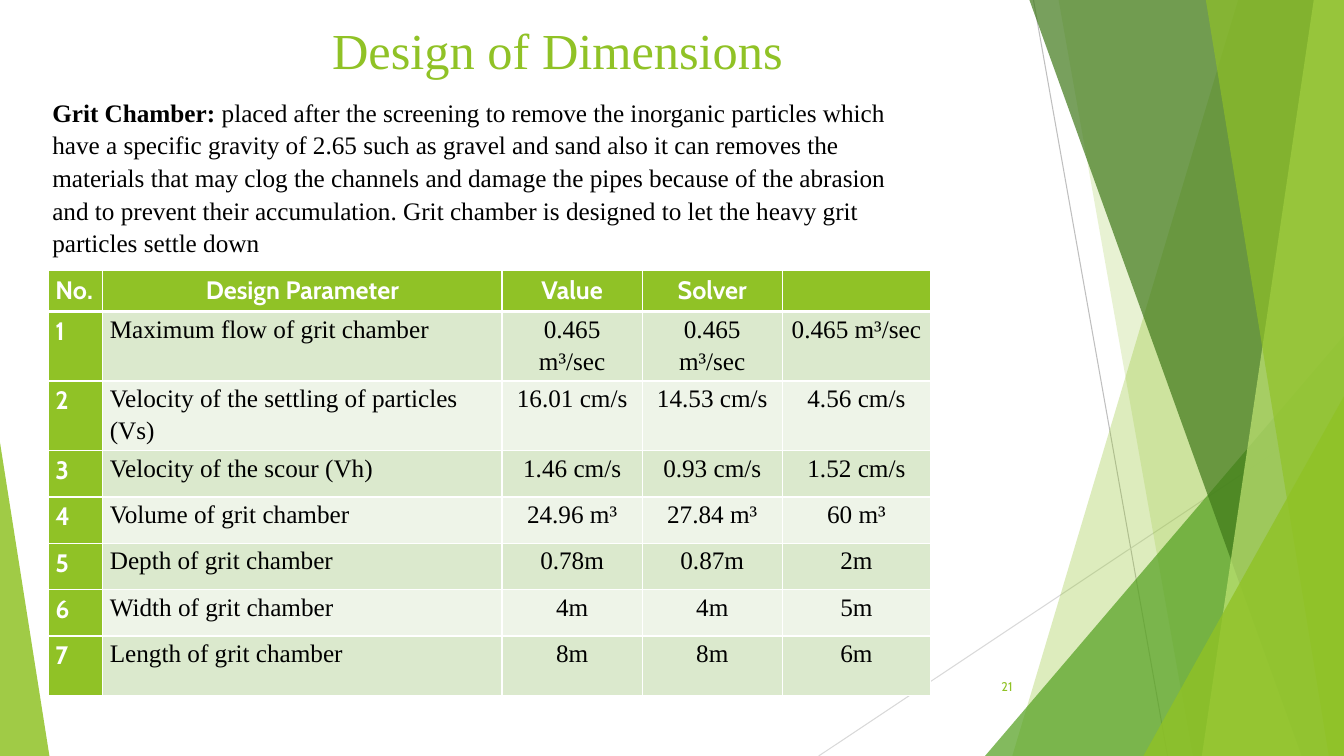
from pptx import Presentation
from pptx.dml.color import RGBColor
from pptx.enum.shapes import MSO_CONNECTOR, MSO_SHAPE
from pptx.enum.text import MSO_ANCHOR, PP_ALIGN
from pptx.oxml.ns import qn
from pptx.util import Pt
from lxml import etree

PX = 9144
SLIDE_WIDTH, SLIDE_HEIGHT = 1333, 750

STRAIGHT = MSO_CONNECTOR.STRAIGHT
TRIANGLE = MSO_SHAPE.ISOSCELES_TRIANGLE
MIDDLE, TOP = MSO_ANCHOR.MIDDLE, MSO_ANCHOR.TOP
LEFT, CENTER, RIGHT = PP_ALIGN.LEFT, PP_ALIGN.CENTER, PP_ALIGN.RIGHT

LIME = RGBColor(0x90, 0xC2, 0x26)
LEAF = RGBColor(0x54, 0xA0, 0x21)
FOREST = RGBColor(0x3F, 0x78, 0x19)
PALE_LIME = RGBColor(0xC0, 0xE4, 0x74)
ODD_ROW = RGBColor(0xDB, 0xE9, 0xCD)
EVEN_ROW = RGBColor(0xEE, 0xF4, 0xE8)
GRAY = RGBColor(0xBF, 0xBF, 0xBF)
LIGHT_GRAY = RGBColor(0xD9, 0xD9, 0xD9)
BLACK = RGBColor(0, 0, 0)
WHITE = RGBColor(0xFF, 0xFF, 0xFF)

SERIF, SANS = "Times New Roman", "Cabin"

DESCRIPTION = (
    "placed after the screening to remove the inorganic particles which have a "
    "specific gravity of 2.65 such as gravel and sand also it can removes the "
    "materials that may clog the channels and damage the pipes because of the "
    "abrasion and to prevent their accumulation. Grit chamber is designed to let "
    "the heavy grit particles settle down"
)
COLUMN_WIDTHS = [54, 396, 139, 139, 147]
ROW_HEIGHTS = [41, 69, 64, 46, 46, 46, 46, 59]
HEADINGS = ["No.", "Design Parameter", "Value", "Solver", ""]
PARAMETERS = [
    ["Maximum flow of grit chamber", "0.465 m³/sec", "0.465 m³/sec", "0.465 m³/sec"],
    ["Velocity of the settling of particles (Vs)", "16.01 cm/s", "14.53 cm/s", "4.56 cm/s"],
    ["Velocity of the scour (Vh)", "1.46 cm/s", "0.93 cm/s", "1.52 cm/s"],
    ["Volume of grit chamber", "24.96 m³", "27.84 m³", "60 m³"],
    ["Depth of grit chamber", "0.78m", "0.87m", "2m"],
    ["Width of grit chamber", "4m", "4m", "5m"],
    ["Length of grit chamber", "8m", "8m", "6m"],
]


def px(*lengths):
    return [length * PX for length in lengths]


def paint(shape, color, opacity):
    shape.shadow.inherit = False
    shape.line.fill.background()
    shape.fill.solid()
    shape.fill.fore_color.rgb = color
    color_node = shape.fill._xPr.find(qn("a:solidFill"))[0]
    etree.SubElement(color_node, qn("a:alpha")).set("val", str(opacity * 1000))


def add_span(para, text, size, font, color, bold=False):
    span = para.add_run()
    span.text = text
    span.font.size = Pt(size)
    span.font.name = font
    span.font.color.rgb = color
    span.font.bold = bold


def add_text(page, box, spans, align=LEFT, anchor=TOP, spacing=1.0):
    frame = page.shapes.add_textbox(*px(*box)).text_frame
    frame.word_wrap = True
    frame.vertical_anchor = anchor
    para = frame.paragraphs[0]
    para.alignment = align
    para.line_spacing = spacing
    for span in spans:
        add_span(para, *span)


def add_ray(page, start, end, color):
    ray = page.shapes.add_connector(STRAIGHT, *px(*start, *end))
    ray.line.color.rgb = color
    ray.line.width = Pt(0.75)
    etree.SubElement(ray._element.spPr, qn("a:effectLst"))


def add_wedge(page, box, apex, color, opacity):
    wedge = page.shapes.add_shape(TRIANGLE, *px(*box))
    wedge.adjustments[0] = apex
    paint(wedge, color, opacity)


def add_facet(page, box, top_x, bottom_x, color, opacity):
    left, top, width, height = box
    right, bottom = left + width, top + height
    builder = page.shapes.build_freeform(left + top_x, top, scale=PX)
    builder.add_line_segments(
        [(right, top), (right, bottom), (left + bottom_x, bottom)], close=True
    )
    paint(builder.convert_to_shape(), color, opacity)


def add_corner(page, box, width, height, color, opacity):
    right, bottom = box[0] + box[2], box[1] + box[3]
    add_wedge(page, (right - width, bottom - height, width, height), 1, color, opacity)


def add_facets(page, box):
    left, top, width, height = box
    add_ray(page, (left + 213, top), (left + 346, top + height), GRAY)
    add_ray(page, (left + width, top + 403), (left, top + height), LIGHT_GRAY)
    add_facet(page, box, 416, 192, LIME, 30)
    add_facet(page, box, 238, 371, LIME, 20)
    add_corner(page, box, 356, 417, LEAF, 72)
    add_facet(page, box, 209, 479, FOREST, 70)
    add_facet(page, box, 491, 380, PALE_LIME, 70)
    add_facet(page, box, 384, 506, LIME, 65)
    add_corner(page, box, 199, 357, LIME, 80)


def add_borders(cell, widths):
    properties = cell._tc.get_or_add_tcPr()
    for side, width in widths.items():
        border = etree.SubElement(properties, qn(f"a:ln{side}"), w=str(Pt(width)))
        fill = etree.SubElement(border, qn("a:solidFill"))
        etree.SubElement(fill, qn("a:srgbClr"), val=str(WHITE))


def fill_cell(cell, text, row, column):
    is_label = row == 0 or column == 0
    cell.margin_left, cell.margin_right = px(7, 7)
    cell.margin_top = cell.margin_bottom = 0
    add_borders(cell, {"L": 1, "R": 1, "T": 3 if row == 1 else 1, "B": 3 if row == 0 else 1})
    cell.fill.solid()
    cell.fill.fore_color.rgb = LIME if is_label else ODD_ROW if row % 2 else EVEN_ROW
    para = cell.text_frame.paragraphs[0]
    para.line_spacing = 1.15
    centered = column > 1 or (row == 0 and column == 1)
    para.alignment = CENTER if centered else LEFT
    if text:
        add_span(para, text, 18, SANS if is_label else SERIF, WHITE if is_label else BLACK, is_label)


def add_parameter_table(page, box):
    rows = [HEADINGS] + [[str(number), *row] for number, row in enumerate(PARAMETERS, 1)]
    table = page.shapes.add_table(len(rows), len(HEADINGS), *px(*box)).table
    for column, width in zip(table.columns, COLUMN_WIDTHS):
        column.width = width * PX
    for row, height in zip(table.rows, ROW_HEIGHTS):
        row.height = height * PX
    for row, texts in enumerate(rows):
        for column, text in enumerate(texts):
            fill_cell(table.cell(row, column), text, row, column)


def build_grit_chamber_page(page):
    add_facets(page, (812, 0, 521, SLIDE_HEIGHT))
    add_wedge(page, (0, 439, 49, 311), 0, LIME, 85)
    add_text(page, (83, 8, 940, 81), [("Design of Dimensions", 36, SERIF, LIME)], CENTER, MIDDLE)
    add_text(page, (939, 661, 75, 40), [("21", 9, SANS, LIME)], RIGHT, MIDDLE)
    add_parameter_table(page, (48, 268, sum(COLUMN_WIDTHS), sum(ROW_HEIGHTS)))
    add_text(
        page,
        (42, 89, 888, 162),
        [("Grit Chamber: ", 18, SERIF, BLACK, True), (DESCRIPTION, 18, SERIF, BLACK)],
        spacing=1.08,
    )


def main():
    deck = Presentation()
    deck.slide_width, deck.slide_height = px(SLIDE_WIDTH, SLIDE_HEIGHT)
    build_grit_chamber_page(deck.slides.add_slide(deck.slide_layouts[6]))
    deck.save("out.pptx")


if __name__ == "__main__":
    main()
